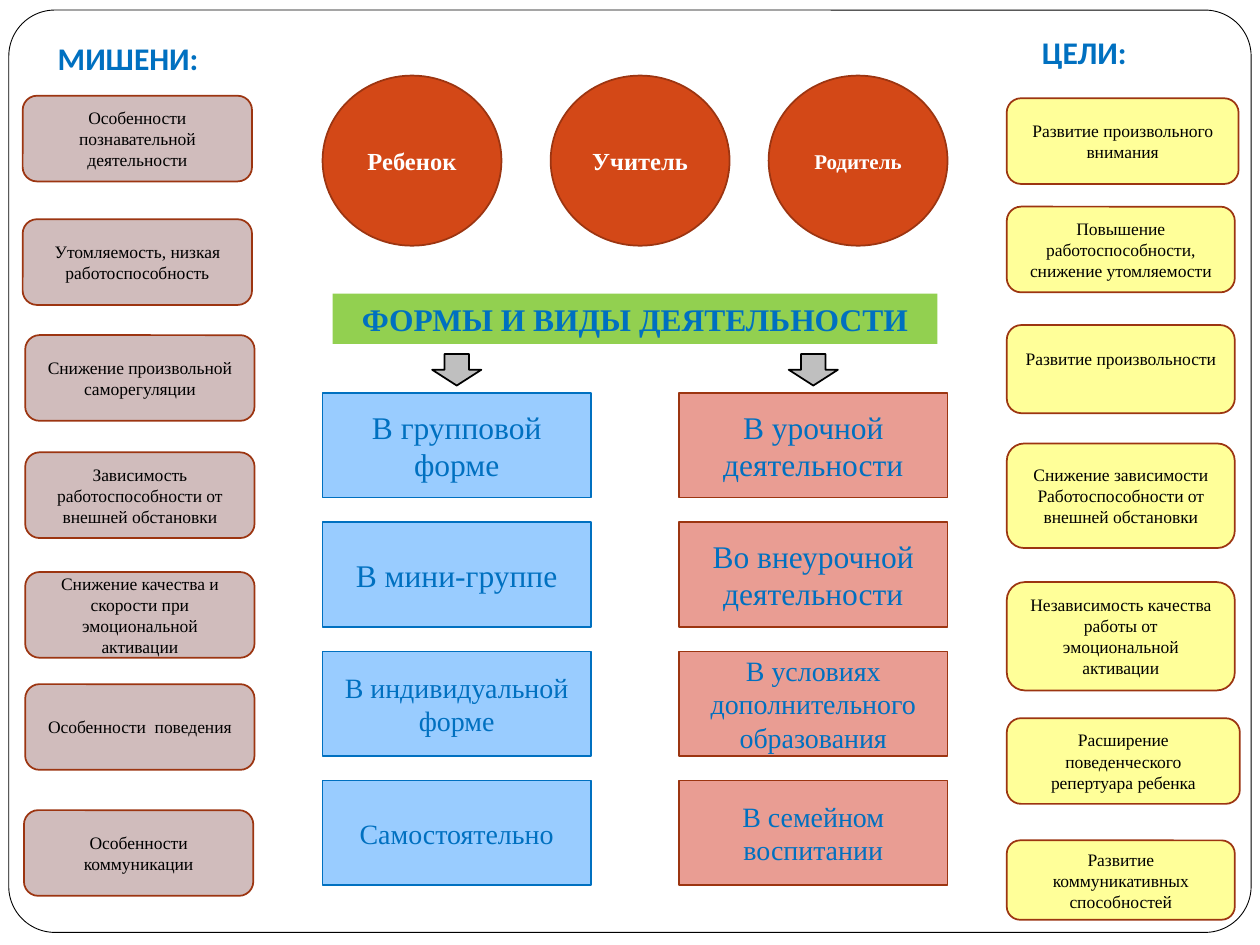
from pptx import Presentation
from pptx.dml.color import RGBColor
from pptx.enum.shapes import MSO_SHAPE
from pptx.enum.text import MSO_ANCHOR, PP_ALIGN
from pptx.util import Inches, Pt

SERIF = "Times New Roman"
RUST = "9C3511"
BLUE = "0070C0"
COLUMN_WIDTH = 2.13
GROUP_LEFT, SETTING_LEFT = 2.56, 5.39
ROW_TOP, ROW_PITCH, ROW_HEIGHT = 3.12, 1.025, 0.83

TARGETS = [
    (0.18, 0.76, "Особенности познавательной деятельности"),
    (0.18, 1.74, "Утомляемость, низкая работоспособность"),
    (0.2, 2.66, "Снижение произвольной саморегуляции"),
    (0.2, 3.59, "Зависимость работоспособности от внешней обстановки"),
    (0.2, 4.54, "Снижение качества и скорости при эмоциональной активации"),
    (0.2, 5.43, "Особенности  поведения"),
    (0.19, 6.43, "Особенности коммуникации"),
]
GOALS = [
    (0.78, 1.84, 0.68, "Развитие произвольного внимания"),
    (1.64, 1.81, 0.68, "Повышение работоспособности, снижение утомляемости"),
    (2.58, 1.81, 0.7, "Развитие произвольности"),
    (3.52, 1.81, 0.83, "Снижение зависимости\nРаботоспособности от внешней обстановки"),
    (4.62, 1.81, 0.86, "Независимость качества работы от эмоциональной активации"),
    (5.7, 1.85, 0.68, "Расширение поведенческого репертуара ребенка"),
    (6.67, 1.81, 0.63, "Развитие коммуникативных способностей"),
]
PARTICIPANTS = [(2.56, "Ребенок", 14), (4.37, "Учитель", 14), (6.1, "Родитель", 12)]
GROUP_FORMS = [
    ("В групповой форме", 18),
    ("В мини-группе", 18),
    ("В индивидуальной форме", 16),
    ("Самостоятельно", 16),
]
SETTINGS = [
    ("В урочной деятельности", 18),
    ("Во внеурочной деятельности", 18),
    ("В условиях дополнительного образования", 16),
    ("В семейном воспитании", 16),
]


def rgb(code):
    return RGBColor.from_string(code)


def write(frame, text, size, color, font=SERIF, bold=False, align=PP_ALIGN.CENTER):
    frame.word_wrap = True
    for index, line in enumerate(text.split("\n")):
        paragraph = frame.add_paragraph() if index else frame.paragraphs[0]
        paragraph.alignment = align
        run = paragraph.add_run()
        run.text = line
        run.font.name = font
        run.font.size = Pt(size)
        run.font.bold = bold
        run.font.color.rgb = rgb(color)


def add_figure(slide, kind, box, fill, line=None, weight=1):
    figure = slide.shapes.add_shape(kind, *map(Inches, box))
    figure.shadow.inherit = False
    figure.fill.solid()
    figure.fill.fore_color.rgb = rgb(fill)
    if line:
        figure.line.color.rgb = rgb(line)
        figure.line.width = Pt(weight)
    else:
        figure.line.fill.background()
    figure.text_frame.vertical_anchor = MSO_ANCHOR.MIDDLE
    return figure


def add_card(slide, box, fill, text):
    card = add_figure(slide, MSO_SHAPE.FLOWCHART_ALTERNATE_PROCESS, box, fill, RUST)
    write(card.text_frame, text, 10, "000000")
    return card


def add_heading(slide, box, text):
    heading = slide.shapes.add_textbox(*map(Inches, box))
    write(heading.text_frame, text, 18, BLUE, "Calibri", True, PP_ALIGN.LEFT)


def add_activity_column(slide, left, activities, fill, line):
    arrow_left = left + (COLUMN_WIDTH - 0.39) / 2
    add_figure(slide, MSO_SHAPE.DOWN_ARROW, (arrow_left, 2.81, 0.39, 0.25), "BFBFBF", "000000")
    for row, (text, size) in enumerate(activities):
        box = (left, ROW_TOP + row * ROW_PITCH, COLUMN_WIDTH, ROW_HEIGHT)
        activity = add_figure(slide, MSO_SHAPE.RECTANGLE, box, fill, line)
        write(activity.text_frame, text, size, BLUE)


def main():
    deck = Presentation()
    deck.slide_width, deck.slide_height = Inches(10), Inches(7.5)
    slide = deck.slides.add_slide(deck.slide_layouts[6])

    border = add_figure(slide, MSO_SHAPE.ROUNDED_RECTANGLE, (0.07, 0.08, 9.86, 7.32),
                        "FFFFFF", "000000", 0.5)
    border.adjustments[0] = 0.05

    add_heading(slide, (0.36, 0.26, 1.41, 0.4), "МИШЕНИ:")
    for left, top, text in TARGETS:
        add_card(slide, (left, top, 1.82, 0.68), "D0BCBC", text)

    add_heading(slide, (8.17, 0.21, 1.08, 0.4), "ЦЕЛИ:")
    for top, width, height, text in GOALS:
        goal = add_card(slide, (7.99, top, width, height), "FFFF99", text)
        if text == "Развитие произвольности":
            goal.text_frame.margin_bottom = Inches(0.22)

    for left, text, size in PARTICIPANTS:
        participant = add_figure(slide, MSO_SHAPE.OVAL, (left, 0.6, 1.42, 1.35), "D34817", RUST)
        write(participant.text_frame, text, size, "FFFFFF", bold=True)

    banner = add_figure(slide, MSO_SHAPE.RECTANGLE, (2.64, 2.33, 4.8, 0.4), "92D050")
    write(banner.text_frame, "ФОРМЫ И ВИДЫ ДЕЯТЕЛЬНОСТИ", 18, BLUE, bold=True)

    add_activity_column(slide, GROUP_LEFT, GROUP_FORMS, "99CCFF", BLUE)
    add_activity_column(slide, SETTING_LEFT, SETTINGS, "E99D93", RUST)

    deck.save("out.pptx")


if __name__ == "__main__":
    main()
